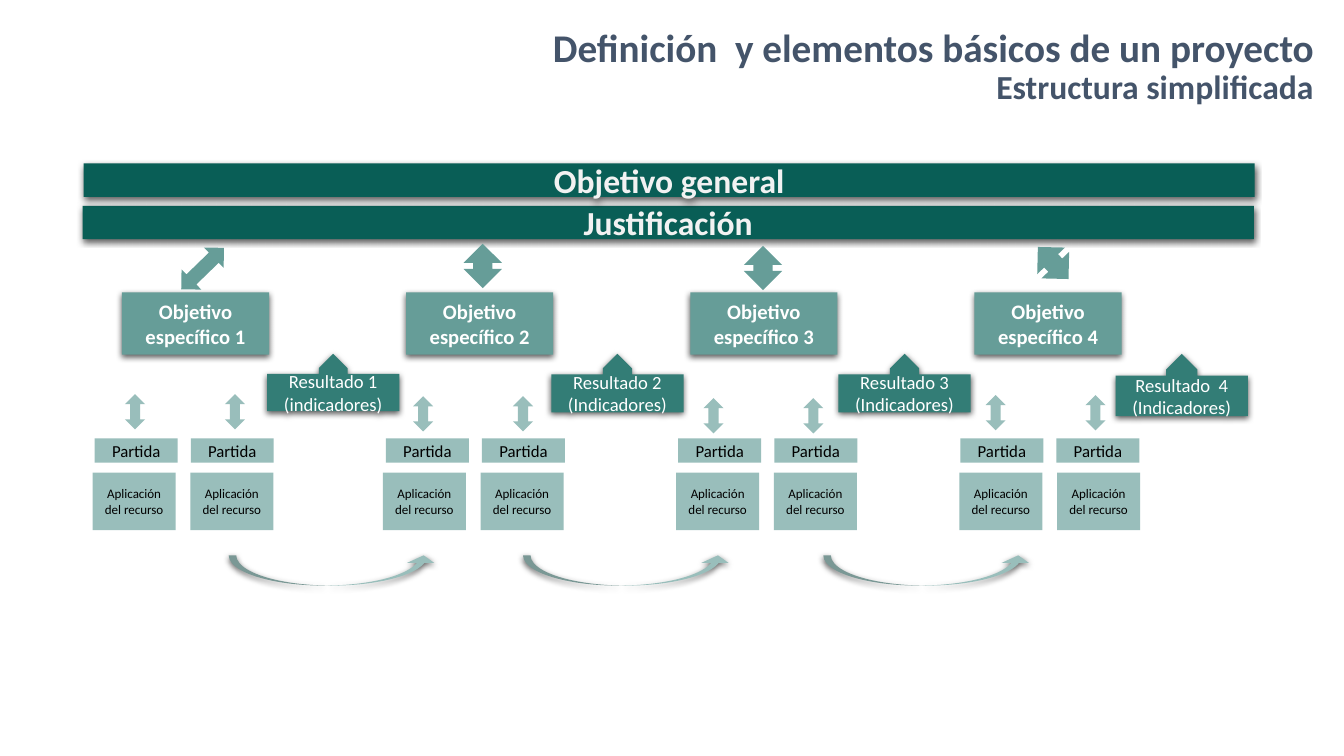
import pptx
import pptx.util
import pptx.dml.color
import pptx.enum.shapes
import pptx.enum.text
import pptx.oxml
import pptx.oxml.ns

Pt = pptx.util.Pt
SHAPE = pptx.enum.shapes.MSO_SHAPE
ALIGN = pptx.enum.text.PP_ALIGN
ANCHOR = pptx.enum.text.MSO_ANCHOR

COLORS = {
    "title": "44546A",
    "bar": "095E56",
    "objective": "669D98",
    "result": "337D76",
    "budget": "99BEBB",
    "light": "F2F2F2",
    "white": "FFFFFF",
    "black": "000000",
}

FORMATS = {
    "title": ({"size": Pt(28), "bold": True}, "title"),
    "subtitle": ({"size": Pt(24), "bold": True}, "title"),
    "bar": ({"size": Pt(24), "bold": True}, "light"),
    "objective": ({"size": Pt(14.7), "bold": True}, "white"),
    "result": ({"size": Pt(13.3), "bold": False}, "white"),
    "budget": ({"size": Pt(12), "bold": False}, "black"),
    "resource": ({"size": Pt(9.3), "bold": False}, "black"),
}

SHADOW = (
    '<a:effectLst xmlns:a="http://schemas.openxmlformats.org/drawingml/2006/main">'
    '<a:outerShdw blurRad="57150" dist="19050" dir="5400000" algn="ctr" rotWithShape="0">'
    '<a:srgbClr val="000000"><a:alpha val="63000"/></a:srgbClr>'
    "</a:outerShdw></a:effectLst>"
)

COLUMNS = [
    {"link": (47.5, 0.7, 20.2, 42.5, 45.8), "result": (103.7, 41),
     "arrows": (2.2, 281.5), "budget": -19.4, "resource": -20.9, "curve": 76.3,
     "lines": ["Resultado 1", "(indicadores)"]},
    {"link": (41, 4.2, 27.4, 31.7, 0), "result": (103.7, 41.8),
     "arrows": (5, 283), "budget": -14.4, "resource": -16.6, "curve": 83.5,
     "lines": ["Resultado 2", "(Indicadores)"]},
    {"link": (38.2, 5.7, 27.4, 31.7, 0), "result": (105.8, 41.8),
     "arrows": (9.4, 284.4), "budget": -8.6, "resource": -10.1, "curve": 95,
     "lines": ["Resultado 3", "(Indicadores)"]},
    {"link": (42.5, 2.1, 27.4, 31.7, 316.3), "result": (100.8, 44.6),
     "arrows": (7.9, 282.2), "budget": -10.1, "resource": -10.8, "curve": None,
     "lines": ["Resultado  4", "(Indicadores)"]},
]


def rgb(name):
    return pptx.dml.color.RGBColor.from_string(COLORS[name])


def write_line(para, text, style, align):
    para.alignment = align
    span = para.add_run()
    span.text = text
    values, color = FORMATS[style]
    for name, value in {"name": "Calibri", **values}.items():
        setattr(span.font, name, value)
    span.font.color.rgb = rgb(color)


def write_lines(frame, lines, styles, align):
    frame.word_wrap = True
    for index, (text, style) in enumerate(zip(lines, styles)):
        para = frame.add_paragraph() if index else frame.paragraphs[0]
        write_line(para, text, style, align)


def add_part(page, kind, box, color, lines=(), style=None, shadow=False, adjust=(), turn=0):
    shape = page.shapes.add_shape(kind, *map(Pt, box))
    shape.fill.solid()
    shape.fill.fore_color.rgb = rgb(color)
    shape.line.fill.background()
    shape.rotation = turn
    for index, value in enumerate(adjust):
        shape.adjustments[index] = value
    if shadow:
        shape._element.spPr.append(pptx.oxml.parse_xml(SHADOW))
    else:
        shape.shadow.inherit = False
    if lines:
        shape.text_frame.vertical_anchor = ANCHOR.MIDDLE
        write_lines(shape.text_frame, lines, [style] * len(lines), ALIGN.CENTER)


def add_heading(page, box):
    frame = page.shapes.add_textbox(*map(Pt, box)).text_frame
    write_lines(frame,
                ["Definición  y elementos básicos de un proyecto", "Estructura simplificada"],
                ["title", "subtitle"], ALIGN.RIGHT)
    for para in frame.paragraphs:
        para.line_spacing = 0.9


def add_bars(page, box):
    left, top, width, height = box
    add_part(page, SHAPE.RECTANGLE, (left, top + 30.2, width, height), "bar",
             ["Justificación"], "bar", shadow=True)
    add_part(page, SHAPE.RECTANGLE, (left + 0.7, top, width, height), "bar",
             ["Objetivo general"], "bar", shadow=True)


def add_objective(page, box, number, column):
    left, top, width, height = box
    add_part(page, SHAPE.RECTANGLE, box, "objective",
             [f"Objetivo específico {number}"], "objective", shadow=True)

    shift, drop, link_width, link_height, turn = column["link"]
    add_part(page, SHAPE.UP_DOWN_ARROW,
             (left + shift, top - 38.9 + drop, link_width, link_height),
             "objective", turn=turn)

    shift, result_height = column["result"]
    add_part(page, SHAPE.UP_ARROW_CALLOUT,
             (left + shift, top + 43.9, 94.5, result_height), "result",
             column["lines"], "result", shadow=True, adjust=(0.5, 0.25, 0.25, 0.65))

    arrow_shift, arrow_top = column["arrows"]
    for side in range(2):
        add_part(page, SHAPE.UP_DOWN_ARROW,
                 (left + arrow_shift + 71.3 * side, arrow_top, 14.4, 25.2), "budget")
        add_part(page, SHAPE.RECTANGLE,
                 (left + column["budget"] + 68.6 * side, top + 104.4, 59.3, 17.3),
                 "budget", ["Partida"], "budget")
        add_part(page, SHAPE.RECTANGLE,
                 (left + column["resource"] + 69.8 * side, top + 128.9, 59.3, 41),
                 "budget", ["Aplicación del recurso"], "resource")

    if column["curve"] is not None:
        add_part(page, SHAPE.CURVED_UP_ARROW,
                 (left + column["curve"], top + 187.9, 149, 21.6), "budget",
                 shadow=True, adjust=(0.25, 0.898, 0.25))


def main():
    deck = pptx.Presentation()
    deck.slide_width, deck.slide_height = Pt(960), Pt(540)
    page = deck.slides.add_slide(deck.slide_layouts[6])
    add_heading(page, (380, 16.6, 565.4, 95.8))
    add_bars(page, (59, 116.8, 836.6, 23.8))
    for index, column in enumerate(COLUMNS):
        add_objective(page, (87.1 + 203 * index, 208.8, 105.1, 44.6), index + 1, column)
    deck.save("out.pptx")


if __name__ == "__main__":
    main()
